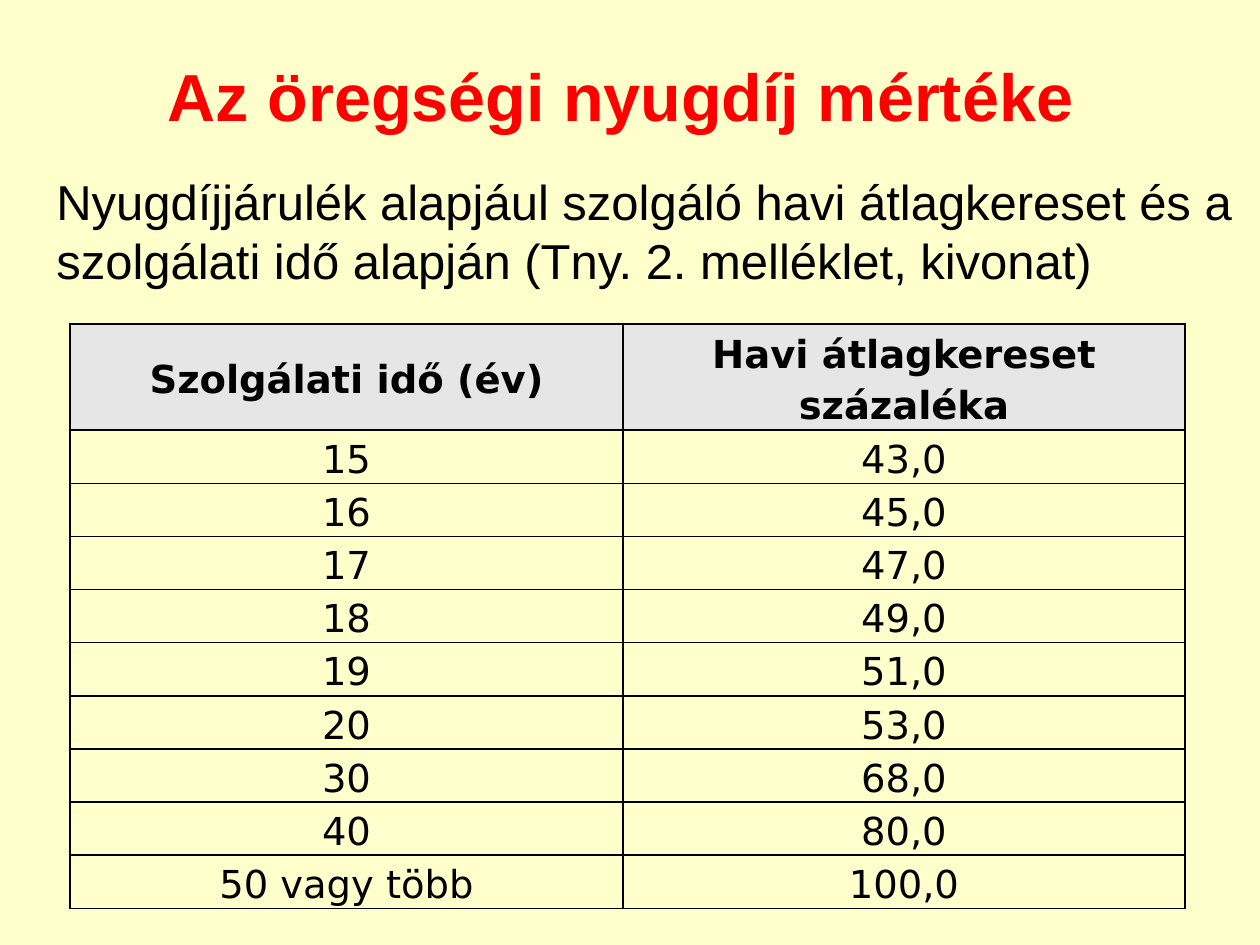
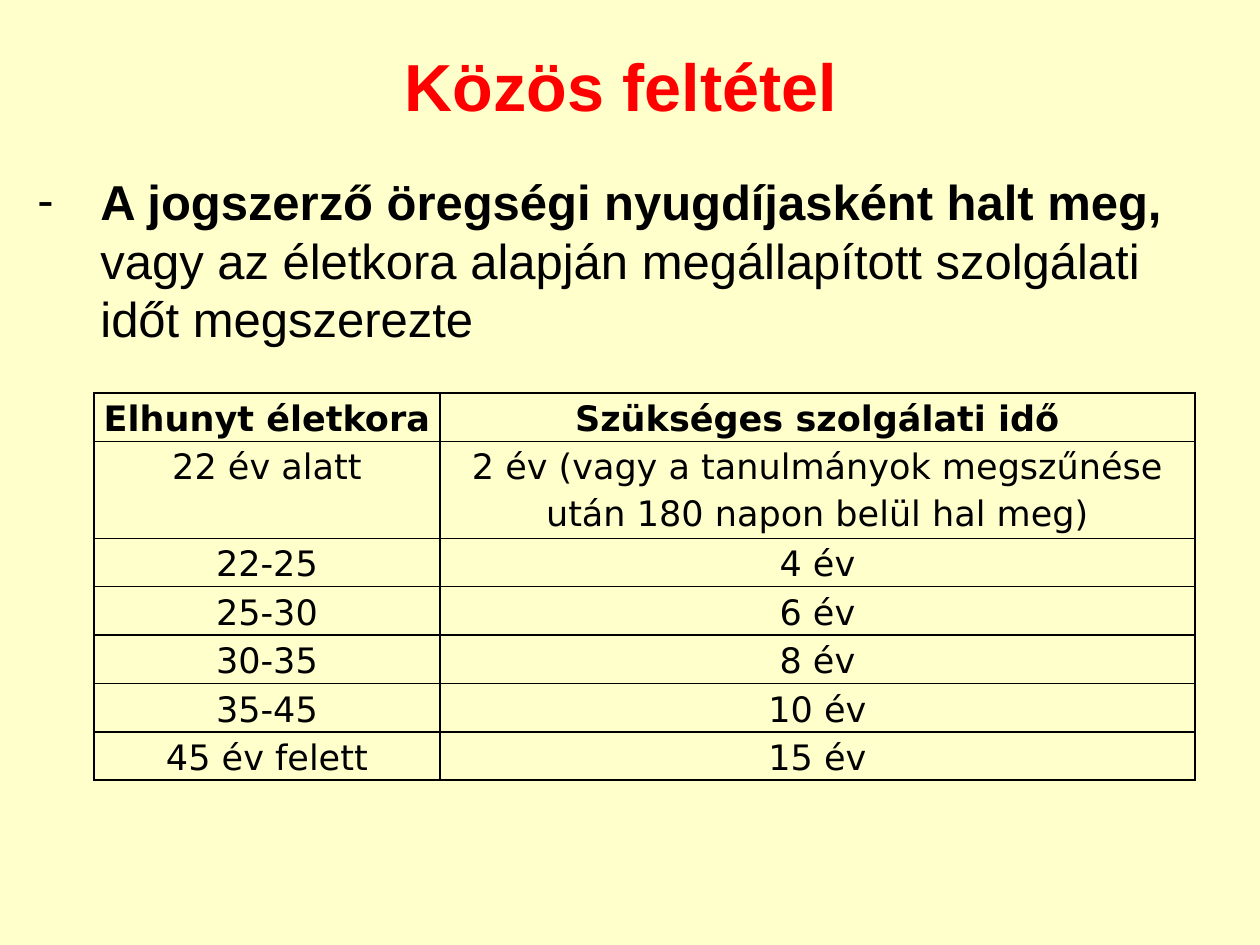
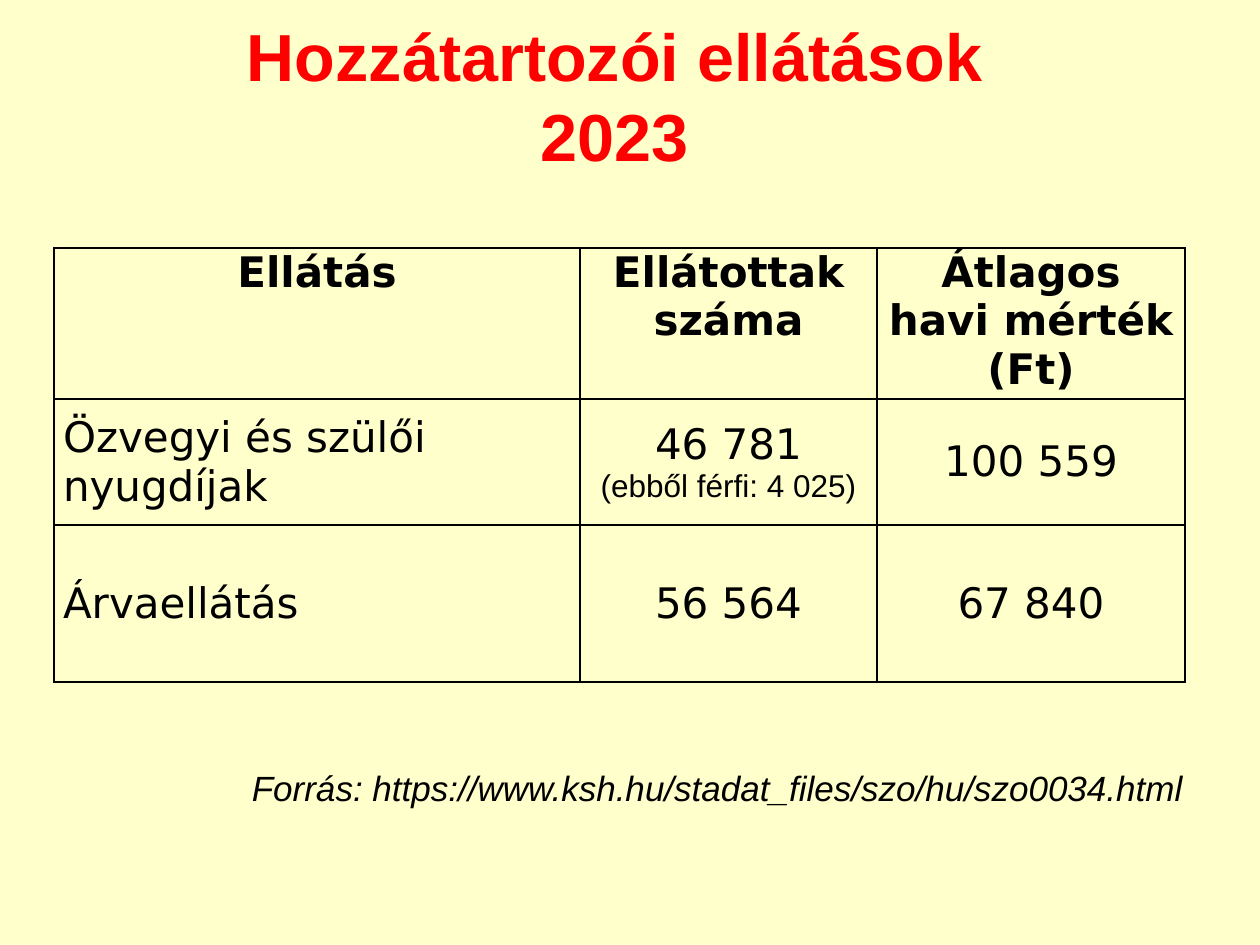
from lxml import etree
from pptx import Presentation
from pptx import util as u
from pptx.dml.color import RGBColor
from pptx.enum import text
from pptx.oxml.ns import qn

# Shared look
PX = 914400 / 126
COLORS = {"page": "FFFFCC", "title": "FF0000", "ink": "000000", "header": "E6E6E6"}
SANS, GRID = "Arial", "DejaVu Sans"
LEFT, CENTER, RIGHT = text.PP_ALIGN.LEFT, text.PP_ALIGN.CENTER, text.PP_ALIGN.RIGHT
TOP, MIDDLE = text.MSO_ANCHOR.TOP, text.MSO_ANCHOR.MIDDLE
TITLE_SIZE = (1134, 120)
INDENT = 63

# Content: text boxes hold (words, style) spans
SLIDES = [
    {
        "title": (["Az öregségi nyugdíj mértéke"], 54, 35),
        "text": {
            "at": (44, 165, 1202, 724), "size": 28,
            "spans": [("Nyugdíjjárulék alapjául szolgáló havi átlagkereset és a "
                       "szolgálati idő alapján (Tny. 2. melléklet, kivonat)", {})],
        },
        "table": {
            "at": (70, 324), "columns": (553, 562), "heights": [106] + [53] * 9,
            "size": 22, "margin": 0, "anchors": (MIDDLE, MIDDLE), "line": 1.15,
            "header_fill": True,
            "rows": [
                ("Szolgálati idő (év)", "Havi átlagkereset százaléka"),
                ("15", "43,0"), ("16", "45,0"), ("17", "47,0"),
                ("18", "49,0"), ("19", "51,0"), ("20", "53,0"),
                ("30", "68,0"), ("40", "80,0"), ("50 vagy több", "100,0"),
            ],
        },
    },
    {
        "title": (["Közös feltétel"], 54, 25),
        "text": {
            "at": (25, 165, 1201, 724), "size": 28, "bullet": "-",
            "spans": [
                ("A jogszerző öregségi nyugdíjasként halt meg, ", {"bold": True}),
                ("vagy az életkora alapján megállapított szolgálati időt megszerezte", {}),
            ],
        },
        "table": {
            "at": (94, 393), "columns": (346, 755), "heights": [48, 97] + [48] * 5,
            "size": 20, "margin": 9, "anchors": (TOP, TOP), "line": 1.15, "after": 10,
            "rows": [
                ("Elhunyt életkora", "Szükséges szolgálati idő"),
                ("22 év alatt",
                 "2 év (vagy a tanulmányok megszűnése után 180 napon belül hal meg)"),
                ("22-25", "4 év"), ("25-30", "6 év"), ("30-35", "8 év"),
                ("35-45", "10 év"), ("45 év felett", "15 év"),
            ],
        },
    },
    {
        "title": (["Hozzátartozói ellátások", "2023"], 48, 35),
        "table": {
            "at": (54, 248), "columns": (526, 297, 308), "heights": [105, 126, 157],
            "size": 24, "margin": 9, "anchors": (TOP, MIDDLE), "first_left": True,
            "rows": [
                ("Ellátás", "Ellátottak száma", "Átlagos havi mérték (Ft)"),
                ("Özvegyi és szülői nyugdíjak",
                 ("46 781", "(ebből férfi: 4 025)"), "100 559"),
                ("Árvaellátás", "56 564", "67 840"),
            ],
        },
        "text": {
            "at": (34, 760, 1162, 59), "size": 20, "align": RIGHT,
            "spans": [("Forrás: https://www.ksh.hu/stadat_files/szo/hu/szo0034.html",
                       {"italic": True})],
        },
    },
]
NOTE_SIZE = 18


def px(*lengths):
    return [u.Emu(round(length * PX)) for length in lengths]


def color(name):
    return RGBColor.from_string(COLORS[name])


def add_span(para, words, size, font=SANS, ink="ink", bold=False, italic=False):
    span = para.add_run()
    span.text = words
    span.font.size = u.Pt(size)
    span.font.name = font
    span.font.bold = bold
    span.font.italic = italic
    span.font.color.rgb = color(ink)


def add_box(page, *place):
    frame = page.shapes.add_textbox(*px(*place)).text_frame
    frame.word_wrap = True
    return frame


def add_title(page, lines, left, top):
    frame = add_box(page, left, top, *TITLE_SIZE)
    frame.vertical_anchor = MIDDLE
    para = frame.paragraphs[0]
    para.alignment = CENTER
    for number, line in enumerate(lines):
        if number:
            para.add_line_break()
        add_span(para, line, 38, ink="title", bold=True)


def add_text(page, item):
    para = add_box(page, *item["at"]).paragraphs[0]
    para.alignment = item.get("align", LEFT)
    para.space_before = u.Pt(item["size"] * 0.05)
    para.space_after = u.Pt(item["size"] * 0.25)
    if "bullet" in item:
        props = para._p.get_or_add_pPr()
        indent = px(INDENT)[0]
        props.set("marL", str(indent))
        props.set("indent", str(-indent))
        etree.SubElement(props, qn("a:buFont"), typeface=SANS)
        etree.SubElement(props, qn("a:buChar"), char=item["bullet"])
    for words, style in item["spans"]:
        add_span(para, words, item["size"], **style)


def add_borders(cell):
    props = cell._tc.get_or_add_tcPr()
    for side in ("lnL", "lnR", "lnT", "lnB"):
        line = etree.SubElement(props, qn("a:" + side), w=str(u.Pt(1)))
        fill = etree.SubElement(line, qn("a:solidFill"))
        etree.SubElement(fill, qn("a:srgbClr"), val=COLORS["ink"])


def fill_cell(cell, content, item, is_header, align):
    cell.margin_left = cell.margin_right = px(item["margin"])[0]
    cell.margin_top = cell.margin_bottom = 0
    cell.vertical_anchor = item["anchors"][0 if is_header else 1]
    add_borders(cell)
    if is_header and item.get("header_fill"):
        cell.fill.solid()
        cell.fill.fore_color.rgb = color("header")
    else:
        cell.fill.background()

    # A second line in a cell is a smaller note
    lines = (content,) if isinstance(content, str) else content
    for number, words in enumerate(lines):
        frame = cell.text_frame
        para = frame.add_paragraph() if number else frame.paragraphs[0]
        para.alignment = align
        if "line" in item:
            para.line_spacing = item["line"]
        if "after" in item:
            para.space_after = u.Pt(item["after"])
        size, font = (NOTE_SIZE, SANS) if number else (item["size"], GRID)
        add_span(para, words, size, font, bold=is_header)


def add_grid(page, item):
    rows, columns, heights = item["rows"], item["columns"], item["heights"]
    place = px(*item["at"], sum(columns), sum(heights))
    table = page.shapes.add_table(len(rows), len(columns), *place).table
    table.first_row = table.horz_banding = False
    for column, width in zip(table.columns, px(*columns)):
        column.width = width
    for row, height in zip(table.rows, px(*heights)):
        row.height = height
    for r, row in enumerate(rows):
        for c, content in enumerate(row):
            to_left = item.get("first_left") and r > 0 and c == 0
            fill_cell(table.cell(r, c), content, item, r == 0, LEFT if to_left else CENTER)


def main():
    deck = Presentation()
    deck.slide_width, deck.slide_height = px(1260, 945)
    for content in SLIDES:
        page = deck.slides.add_slide(deck.slide_layouts[6])
        page.background.fill.solid()
        page.background.fill.fore_color.rgb = color("page")
        add_title(page, *content["title"])
        add_text(page, content["text"])
        add_grid(page, content["table"])
    deck.save("out.pptx")


if __name__ == "__main__":
    main()
